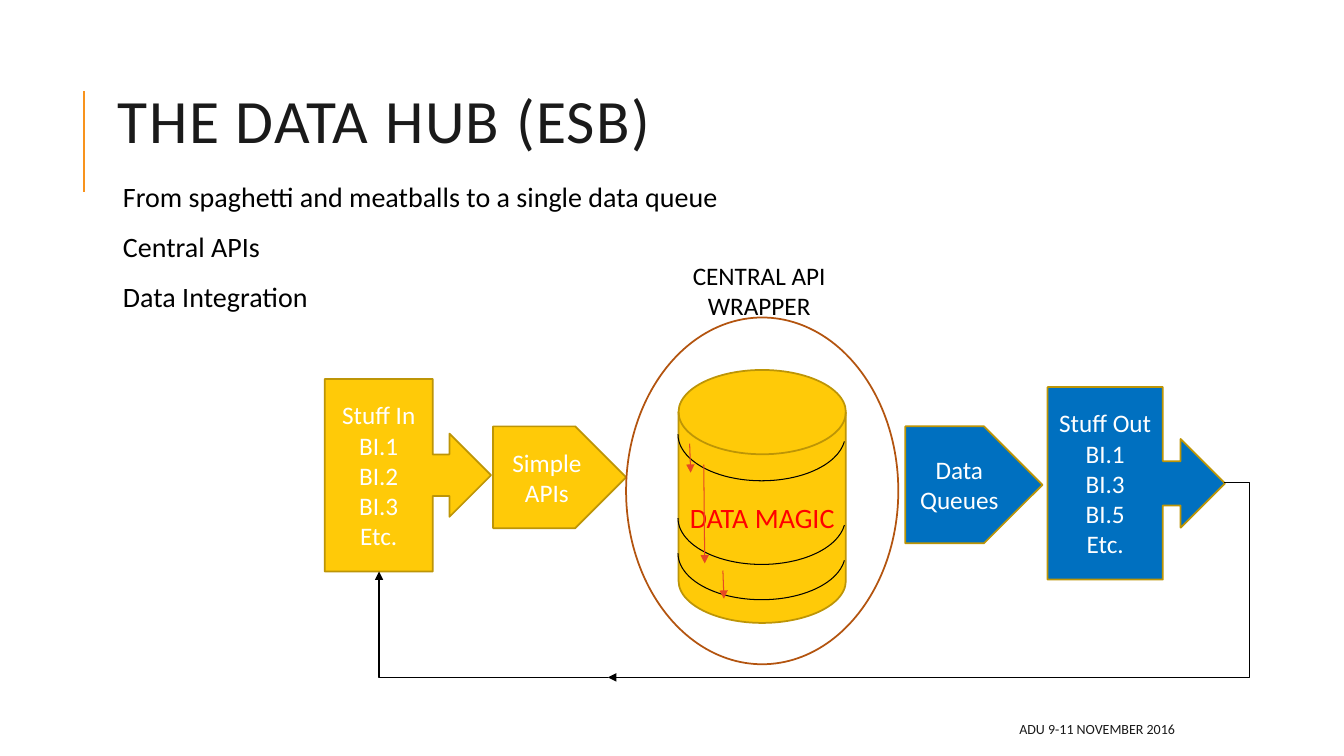
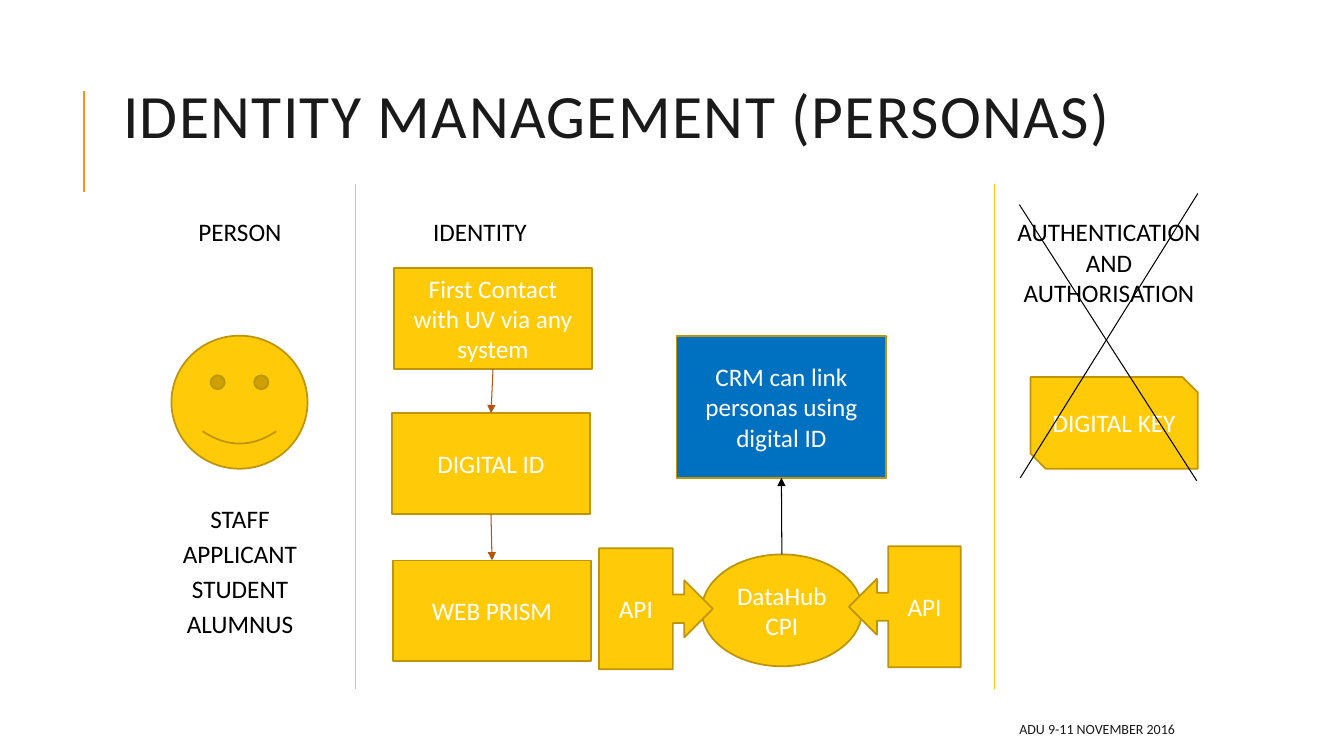
from pptx import Presentation
from pptx.dml.color import RGBColor
from pptx.enum.shapes import MSO_CONNECTOR as LINK, MSO_SHAPE as SHAPE
from pptx.enum.text import MSO_ANCHOR as ANCHOR, MSO_AUTO_SIZE, PP_ALIGN as ALIGN
from pptx.oxml.ns import qn
from pptx.util import Inches, Pt
from lxml.etree import SubElement

FONT = "Calibri"
GOLD, EDGE, BLUE, RUST = "FFCA08", "BD9506", "0070C0", "B3540F"
ORANGE, TOMATO, RED = "F8931D", "E64823", "FF0000"
INK, BLACK, WHITE = "1A1A1A", "000000", "FFFFFF"
CELL = Inches(0.1)  # the slide is a grid of 133.3 columns by 75 rows
rgb = RGBColor.from_string

prs = Presentation()
prs.slide_width, prs.slide_height = Inches(13.33), Inches(7.5)


def box(s, kind, at, text="", fill=GOLD, line=EDGE, color=WHITE, size=18,
        align=ALIGN.CENTER, width=1.25):
    """Add a preset shape, or a text box when kind is None."""
    at = [round(v * CELL) for v in at]
    if kind is None:
        sp = s.shapes.add_textbox(*at)
    else:
        sp = s.shapes.add_shape(kind, *at)
        sp.shadow.inherit = False
        sp.line.color.rgb = rgb(line)
        sp.line.width = Pt(width)
        if fill:
            sp.fill.solid()
            sp.fill.fore_color.rgb = rgb(fill)
        else:
            sp.fill.background()
    tf = sp.text_frame
    tf.word_wrap = True
    tf.vertical_anchor = ANCHOR.TOP if kind is None else ANCHOR.MIDDLE
    if text:
        tf.text = text
    for p in tf.paragraphs:
        p.alignment = align
        for r in p.runs:
            r.font.name, r.font.size = FONT, Pt(size)
            r.font.color.rgb = rgb(color)
    return sp


def link(s, x1, y1, x2, y2, color=BLACK, width=0.75, arrow=False, kind=LINK.STRAIGHT):
    """Add a line or arrow between two grid points."""
    cx = s.shapes.add_connector(kind, *[round(v * CELL) for v in (x1, y1, x2, y2)])
    cx.line.color.rgb = rgb(color)
    cx.line.width = Pt(width)
    if arrow:
        SubElement(cx.line._get_or_add_ln(), qn("a:tailEnd"), type="triangle")
    SubElement(cx._element.spPr, qn("a:effectLst"))
    return cx


# Shared frame: accent line, title, footer
slides = []
for title, left, height in (("THE DATA HUB (ESB)", 10.7, 12.1),
                            ("IDENTITY MANAGEMENT (PERSONAS)", 11.2, 11.1)):
    s = prs.slides.add_slide(prs.slide_layouts[5])
    slides.append(s)
    link(s, 8.3, 19, 8.3, 9, ORANGE, 1.5)
    sp = s.shapes.title
    sp.left, sp.top, sp.width, sp.height = [
        round(v * CELL) for v in (left, 6.4, 106.3, height)]
    tf = sp.text_frame
    tf.text = title
    tf.auto_size, tf.vertical_anchor = MSO_AUTO_SIZE.NONE, ANCHOR.MIDDLE
    p = tf.paragraphs[0]
    p.alignment, p.line_spacing = ALIGN.LEFT, 0.8
    r = p.runs[0]
    r.font.name, r.font.size, r.font.color.rgb = FONT, Pt(44), rgb(INK)
    r._r.get_or_add_rPr().set("spc", "100")
    sp = box(s, None, (53, 70.8, 64.5, 3), "ADU 9-11 NOVEMBER 2016",
             color=INK, size=10, align=ALIGN.RIGHT)
    sp.text_frame.vertical_anchor = ANCHOR.MIDDLE

hub, identity = slides

# Data hub: introduction
sp = box(hub, None, (10.7, 17.7, 106.3, 44),
         "From spaghetti and meatballs to a single data queue\nCentral APIs\nData Integration",
         color=BLACK, size=20, align=ALIGN.LEFT)
sp.text_frame.margin_left = Inches(0.15)
for p in sp.text_frame.paragraphs:
    p.line_spacing, p.space_before, p.space_after = 0.9, Pt(12), Pt(2)

# Data hub: flow from left to right
for kind, at, text, fill in (
        (SHAPE.RIGHT_ARROW_CALLOUT, (32.2, 37.6, 16.5, 19.1),
         "Stuff In\nBI.1\nBI.2\nBI.3\nEtc.", GOLD),
        (SHAPE.PENTAGON, (48.9, 42.3, 13.2, 10.1), "Simple\nAPIs", GOLD),
        (SHAPE.PENTAGON, (89.8, 42.3, 13.6, 11.6), "Data Queues", BLUE),
        (SHAPE.RIGHT_ARROW_CALLOUT, (103.9, 38.4, 17.6, 19.1),
         "Stuff Out\nBI.1\nBI.3\nBI.5\nEtc.", BLUE)):
    box(hub, kind, at, text, fill)

# Data hub: layered store inside its wrapper
box(hub, SHAPE.FLOWCHART_MAGNETIC_DISK, (67.3, 36.7, 16.6, 25.1), "DATA MAGIC",
    color=RED, size=20)
for top in (38.5, 46.8, 50.3):
    sp = box(hub, SHAPE.ARC, (67.25, top, 16.6, 9.2), fill=None, line=BLACK, width=0.75)
    for i, degrees in enumerate((4.86, 180)):
        sp.adjustments[i] = degrees * 0.6
box(hub, SHAPE.OVAL, (62.1, 31.5, 27, 34.4), fill=None, line=RUST)
box(hub, None, (67.1, 25.3, 16.4, 7.1), "CENTRAL API WRAPPER", color=BLACK)
for x, y1, y2 in ((68.4, 44, 46.9), (69.8, 46.1, 55.9), (71.7, 56.6, 59.4)):
    link(hub, x, y1, x + 0.1, y2, TOMATO, arrow=True)

# Data hub: return path
cx = link(hub, 121.4, 47.9, 60.3, 67.2, arrow=True, kind=LINK.ELBOW)
guides = cx._element.spPr.find(qn("a:prstGeom")).get_or_add_avLst()
SubElement(guides, qn("a:gd"), name="adj1", fmla="val -4100")
cx = link(hub, 60.3, 67.2, 37.6, 56.7, arrow=True, kind=LINK.ELBOW)
cx._element.spPr.find(qn("a:prstGeom")).set("prst", "bentConnector2")

# Identity: column dividers and headings
for x in (35.3, 98.6):
    link(identity, x, 18.3, x, 68.4, GOLD)
for x, width, text in ((16.2, 15.2, "PERSON"), (40, 15.2, "IDENTITY"),
                       (98.8, 22.4, "AUTHENTICATION AND AUTHORISATION")):
    box(identity, None, (x, 21, width, 4), text, color=BLACK)

# Identity: person and roles
box(identity, SHAPE.SMILEY_FACE, (17, 33.3, 13.5, 13.2))
for i, role in enumerate(("STAFF", "APPLICANT", "STUDENT", "ALUMNUS")):
    box(identity, None, (16.2, 49.4 + 3.47 * i, 15.2, 4), role, color=BLACK)

# Identity: chain of steps
steps = [box(identity, SHAPE.FLOWCHART_PROCESS, (x, y, 19.6, 10), text)
         for x, y, text in ((39.1, 26.6, "First Contact with UV via any system"),
                            (38.9, 41, "DIGITAL ID"),
                            (39, 55.6, "WEB PRISM"))]

# Identity: hub, its two interfaces and the CRM
datahub = box(identity, SHAPE.OVAL, (69.6, 55, 15.9, 11.1), "DataHub\nCPI")
box(identity, SHAPE.RIGHT_ARROW_CALLOUT, (59.4, 54.4, 11.3, 12), "API")
sp = box(identity, SHAPE.RIGHT_ARROW_CALLOUT, (84.2, 54.2, 11.1, 12), "API")
sp._element.spPr.get_or_add_xfrm().set("flipH", "1")
crm = box(identity, SHAPE.RECTANGLE, (67.1, 33.3, 20.8, 14.1),
          "CRM can link personas using digital ID", BLUE)

# Identity: arrows from one box to the next
for start, out, end, into, color in ((steps[0], 2, steps[1], 0, RUST),
                                     (steps[1], 2, steps[2], 0, RUST),
                                     (datahub, 0, crm, 2, BLACK)):
    cx = link(identity, 0, 0, 1, 1, color, arrow=True)
    cx.begin_connect(start, out)
    cx.end_connect(end, into)

# Identity: crossed-out key
box(identity, SHAPE.SNIP_2_DIAG_RECTANGLE, (102.2, 37.4, 16.6, 9.1), "DIGITAL KEY")
link(identity, 101.1, 20.3, 118.7, 47.7)
link(identity, 118.8, 19.2, 101.2, 47.4)

prs.save("out.pptx")
